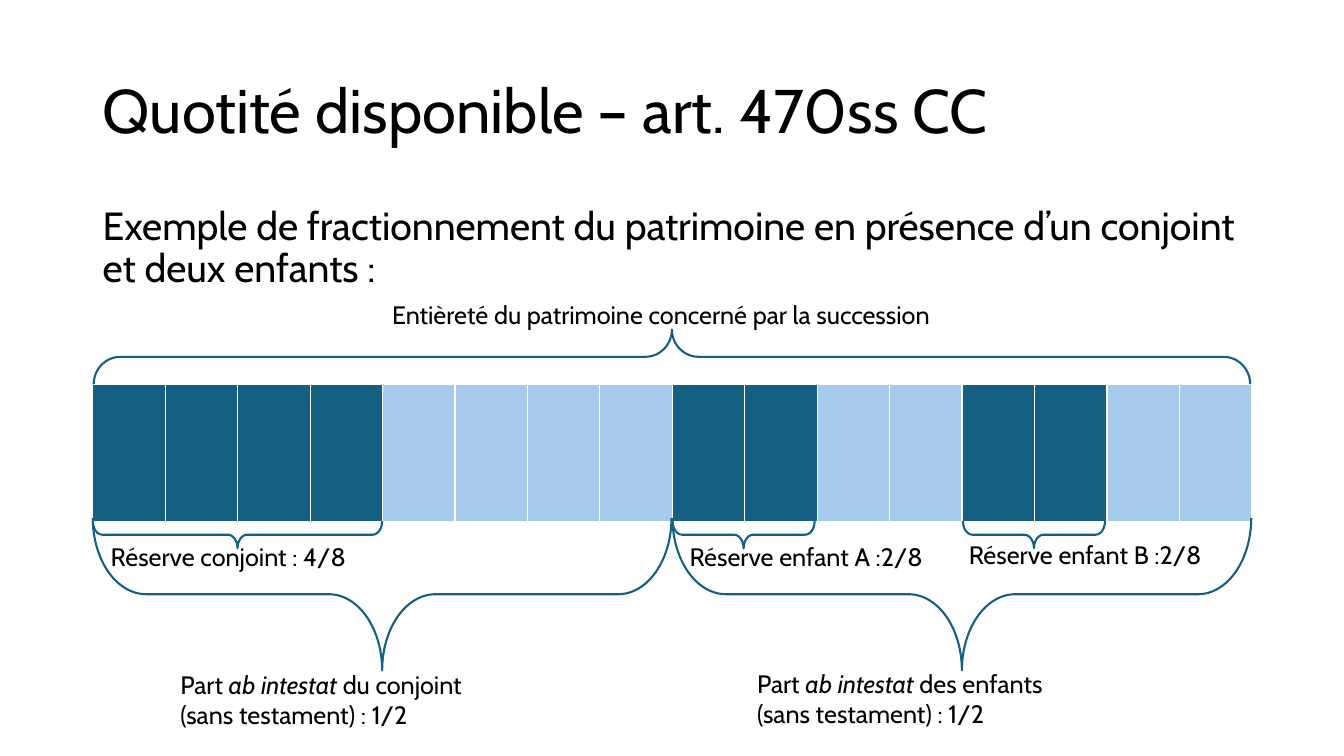
import pptx
import pptx.dml.color
import pptx.enum.shapes
import pptx.enum.text
import pptx.util

PX = 9144  # EMU per px, 100 px to the inch
FONT = "Cabin"
BLACK = pptx.dml.color.RGBColor(0x00, 0x00, 0x00)
DARK_BLUE = pptx.dml.color.RGBColor(0x15, 0x60, 0x82)
LIGHT_BLUE = pptx.dml.color.RGBColor(0xA6, 0xCA, 0xEC)

BAR_LEFT, BAR_TOP, BAR_WIDTH, BAR_HEIGHT = 92, 381, 1150, 136
PARTS = 16


def write_text(shape, box, paragraphs, size):
    """Place a text shape and fill it with paragraphs of (text, italic) runs."""
    shape.left, shape.top, shape.width, shape.height = [length * PX for length in box]
    frame = shape.text_frame
    frame.word_wrap = True
    for index, runs in enumerate(paragraphs):
        paragraph = frame.add_paragraph() if index else frame.paragraphs[0]
        paragraph.alignment = pptx.enum.text.PP_ALIGN.LEFT
        for text, italic in runs:
            run = paragraph.add_run()
            run.text = text
            run.font.name = FONT
            run.font.size = pptx.util.Pt(size)
            run.font.italic = italic
            run.font.color.rgb = BLACK
    return frame


def add_brace(left, top, span, depth, rotation, curl, point):
    """Draw a horizontal brace inside the box left, top, span, depth."""
    shift = (span - depth) * PX // 2
    brace = slide.shapes.add_shape(
        pptx.enum.shapes.MSO_SHAPE.RIGHT_BRACE,
        left * PX + shift, top * PX - shift, depth * PX, span * PX)
    brace.rotation = rotation
    brace.adjustments[0] = curl
    brace.adjustments[1] = point
    brace.shadow.inherit = False
    brace.fill.background()
    brace.line.color.rgb = DARK_BLUE
    brace.line.width = pptx.util.Pt(1.5)


presentation = pptx.Presentation()
presentation.slide_width = 1333 * PX
presentation.slide_height = 750 * PX
slide = presentation.slides.add_slide(presentation.slide_layouts[5])

# Title and introduction
title_frame = write_text(slide.shapes.title, (92, 40, 1150, 145),
                         [[("Quotité disponible – art. 470ss CC", False)]], 44)
title_frame.vertical_anchor = pptx.enum.text.MSO_ANCHOR.MIDDLE
title_frame.paragraphs[0].line_spacing = 0.9

introduction = "Exemple de fractionnement du patrimoine en présence d’un conjoint et deux enfants :"
introduction_frame = write_text(slide.shapes.add_textbox(0, 0, 0, 0), (92, 200, 1150, 476),
                                [[(introduction, False)]], 28)
introduction_frame.paragraphs[0].line_spacing = 0.9

# Estate bar: reserved parts are dark, freely disposable parts are light
table = slide.shapes.add_table(1, PARTS, BAR_LEFT * PX, BAR_TOP * PX,
                               BAR_WIDTH * PX, BAR_HEIGHT * PX).table
part_colors = [DARK_BLUE] * 4 + [LIGHT_BLUE] * 4 + ([DARK_BLUE] * 2 + [LIGHT_BLUE] * 2) * 2
for column, color in enumerate(part_colors):
    table.columns[column].width = BAR_WIDTH * PX // PARTS
    cell = table.cell(0, column)
    cell.fill.solid()
    cell.fill.fore_color.rgb = color

# Braces: whole estate above, reserves and intestate shares below
bar_middle = BAR_LEFT + BAR_WIDTH // 2
add_brace(93, 327, 1147, 54, 270, 0.49, 0.5)
for left, span in ((BAR_LEFT, 287), (bar_middle, 141), (955, 141)):
    add_brace(left, 517, span, 27, 90, 0.35, 0.5)
for left in (BAR_LEFT, bar_middle):
    add_brace(left, 514, 574, 151, 90, 0.35, 0.5)

# Labels
labels = [
    ((379, 292, 574, 40), "Entièreté du patrimoine concerné par la succession"),
    ((100, 532, 280, 40), "Réserve conjoint : 4/8"),
    ((674, 532, 261, 40), "Réserve enfant A :2/8"),
    ((951, 530, 261, 40), "Réserve enfant B :2/8"),
]
label_paragraphs = [(box, [[(text, False)]]) for box, text in labels]
for box, heirs in (((169, 659, 416, 71), "du conjoint"), ((741, 658, 421, 71), "des enfants")):
    label_paragraphs.append((box, [
        [("Part ", False), ("ab intestat ", True), (heirs, False)],
        [("(sans testament) : 1/2", False)],
    ]))
for box, paragraphs in label_paragraphs:
    label_frame = write_text(slide.shapes.add_textbox(0, 0, 0, 0), box, paragraphs, 18)
    label_frame.auto_size = pptx.enum.text.MSO_AUTO_SIZE.SHAPE_TO_FIT_TEXT

presentation.save("out.pptx")
